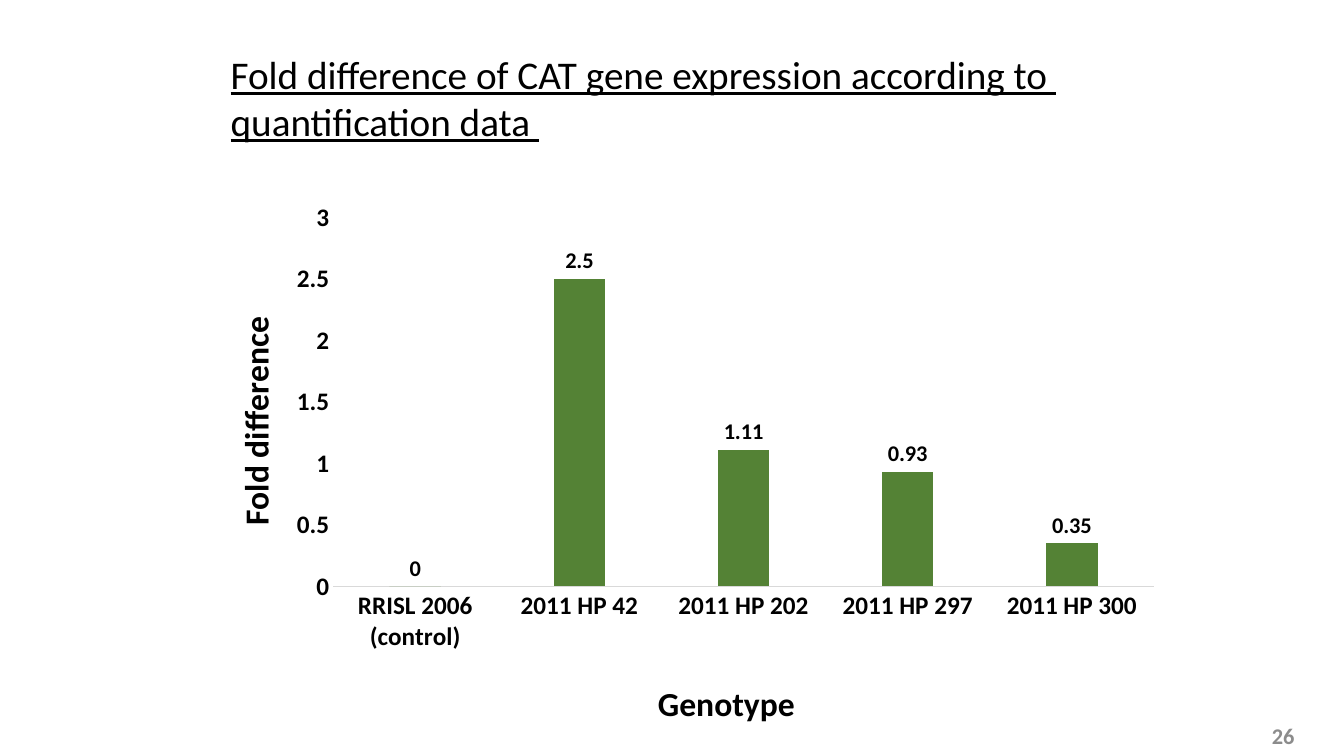
from dataclasses import dataclass

from lxml import etree
from pptx import Presentation
from pptx.chart import data
from pptx.dml import color
from pptx.enum import chart as ch, text
from pptx.oxml import ns
from pptx.util import Pt


@dataclass(frozen=True)
class Theme:
    font: str = "Calibri"
    ink: str = "000000"
    muted: str = "8C8C8C"
    bar: str = "548235"
    rule: str = "D9D9D9"
    heading: int = 28
    axis_title: int = 24
    tick: int = 18
    value: int = 16
    page: int = 16


THEME = Theme()
EXPRESSION = {
    "RRISL 2006 (control)": 0,
    "2011 HP 42": 2.5,
    "2011 HP 202": 1.11,
    "2011 HP 297": 0.93,
    "2011 HP 300": 0.35,
}


def style(font, size, tint=THEME.ink, bold=True, underline=None):
    font.name = THEME.font
    font.size = Pt(size)
    font.bold = bold
    font.underline = underline
    font.color.rgb = color.RGBColor.from_string(tint)


def add_text(slide, box, lines, align, anchor, **look):
    frame = slide.shapes.add_textbox(*map(Pt, box)).text_frame
    frame.word_wrap = True
    frame.vertical_anchor = anchor
    frame.text = "\n".join(lines)
    for paragraph in frame.paragraphs:
        paragraph.alignment = align
        for run in paragraph.runs:
            style(run.font, **look)


def place(element, **layout):
    holder = element.find(ns.qn("c:layout"))
    if holder is None:
        holder = etree.Element(ns.qn("c:layout"))
        element.insert(0, holder)
    manual = etree.SubElement(holder, ns.qn("c:manualLayout"))
    for tag, value in layout.items():
        etree.SubElement(manual, ns.qn(f"c:{tag}")).set("val", str(value))


def format_axis(axis, title, x, y):
    axis.has_major_gridlines = False
    axis.major_tick_mark = axis.minor_tick_mark = ch.XL_TICK_MARK.NONE
    style(axis.tick_labels.font, THEME.tick)
    caption = axis.axis_title
    caption.text_frame.text = title
    style(caption.text_frame.paragraphs[0].runs[0].font, THEME.axis_title)
    place(caption._element, xMode="edge", yMode="edge", x=x, y=y)


def add_expression_chart(slide, box):
    table = data.CategoryChartData()
    table.categories = list(EXPRESSION)
    table.add_series("Series 1", list(EXPRESSION.values()))
    chart = slide.shapes.add_chart(
        ch.XL_CHART_TYPE.COLUMN_CLUSTERED, *map(Pt, box), table
    ).chart
    chart.has_legend = False
    chart.has_title = False
    style(chart.font, 10, bold=False)

    genotype, fold = chart.category_axis, chart.value_axis
    format_axis(genotype, "Genotype", 0.46, 0.88)
    genotype.format.line.color.rgb = color.RGBColor.from_string(THEME.rule)
    genotype.format.line.width = Pt(0.75)
    format_axis(fold, "Fold difference", 0.02, 0.22)
    fold.format.line.fill.background()
    fold.minimum_scale, fold.maximum_scale, fold.major_unit = 0, 3, 0.5
    fold.tick_labels.number_format = "General"
    fold.tick_labels.number_format_is_linked = False

    plot = chart.plots[0]
    plot.gap_width, plot.overlap = 219, -27
    plot.vary_by_categories = False
    bars = plot.series[0]
    bars.format.fill.solid()
    bars.format.fill.fore_color.rgb = color.RGBColor.from_string(THEME.bar)
    labels = bars.data_labels
    labels.show_value = True
    labels.position = ch.XL_LABEL_POSITION.OUTSIDE_END
    style(labels.font, THEME.value)
    place(chart._chartSpace.chart.plotArea, layoutTarget="inner",
          xMode="edge", yMode="edge", x=0.13, y=0.05, w=0.85, h=0.67)


def main():
    deck = Presentation()
    deck.slide_width, deck.slide_height = Pt(960), Pt(540)
    slide = deck.slides.add_slide(deck.slide_layouts[6])
    add_text(slide, (715.7, 511.2, 216, 28.8), ["26"],
             text.PP_ALIGN.RIGHT, text.MSO_ANCHOR.MIDDLE,
             size=THEME.page, tint=THEME.muted)
    add_text(slide, (157.7, 32.4, 726.5, 74.9),
             ["Fold difference of CAT gene expression according to ",
              "quantification data "],
             text.PP_ALIGN.LEFT, text.MSO_ANCHOR.TOP,
             size=THEME.heading, bold=False, underline=True)
    add_expression_chart(slide, (148.3, 135.4, 689.8, 393.8))
    deck.save("out.pptx")


if __name__ == "__main__":
    main()
